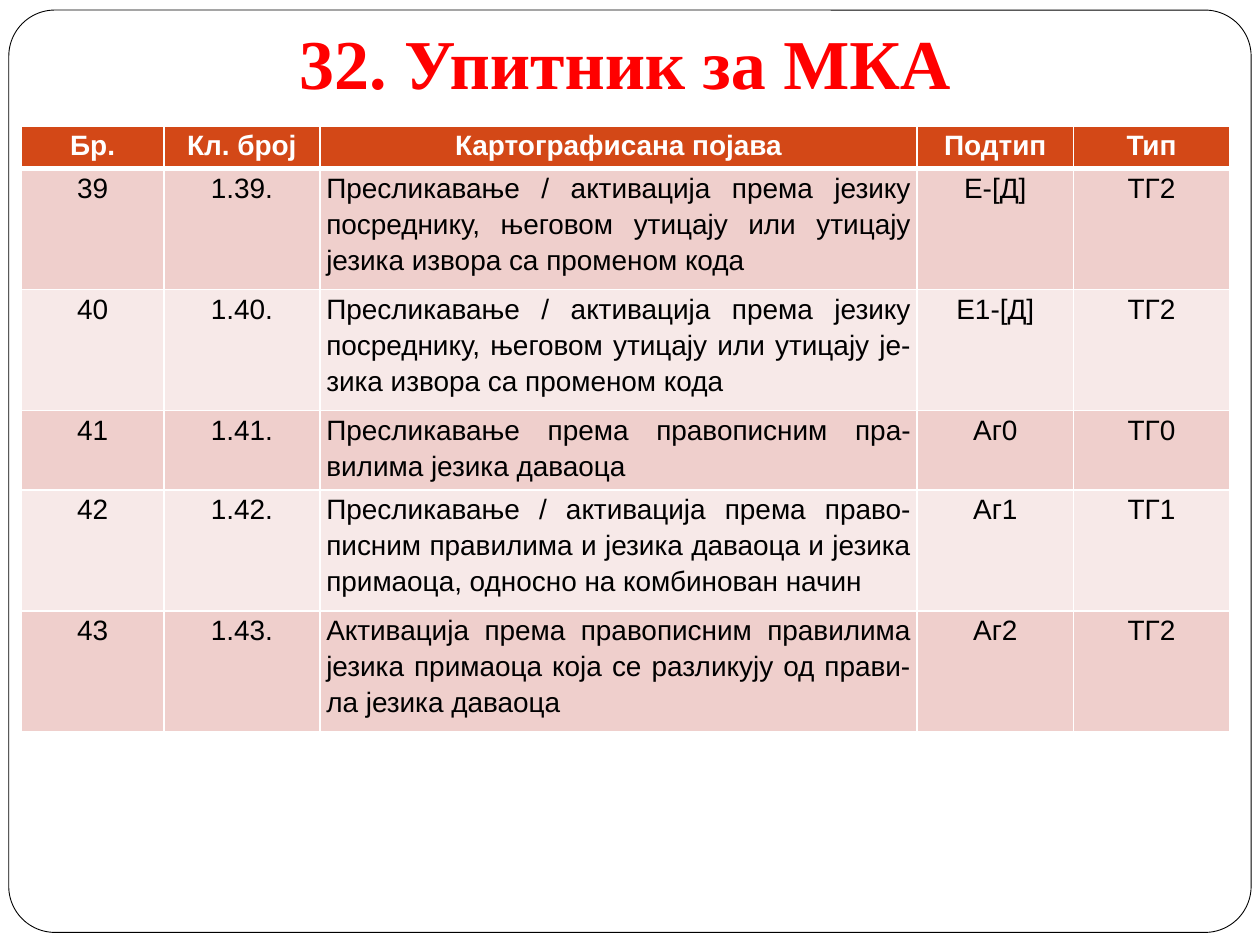
from lxml.etree import SubElement
from pptx import Presentation
from pptx.dml.color import RGBColor
from pptx.enum.shapes import MSO_SHAPE as Shape
from pptx.enum.text import MSO_ANCHOR as Anchor, PP_ALIGN as Align
from pptx.oxml.ns import qn
from pptx.util import Inches, Pt

WHITE = RGBColor(0xFF, 0xFF, 0xFF)
BLACK = RGBColor(0x00, 0x00, 0x00)
RED = RGBColor(0xFF, 0x00, 0x00)
HEADER_FILL = RGBColor(0xD3, 0x48, 0x17)
BAND_FILLS = [RGBColor(0xEF, 0xCF, 0xCC), RGBColor(0xF7, 0xE9, 0xE8)]

TITLE_FONT = {"name": "Times New Roman", "size": Pt(40), "bold": True}
HEADER_FONT = {"name": "Arial", "size": Pt(16), "bold": True}
BODY_FONT = {**HEADER_FONT, "bold": False}

COLUMN_WIDTHS = [1.13, 1.24, 4.74, 1.24, 1.24]
ROW_HEIGHTS = [0.34, 0.96, 0.96, 0.63, 0.96, 0.96]
PHENOMENON_COLUMN = 2
ROWS = [
    ("Бр.", "Кл. број", "Картографисана појава", "Подтип", "Тип"),
    ("39", "1.39.",
     "Пресликавање / активација према језику посреднику, његовом утицају "
     "или утицају језика извора са променом кода", "Е-[Д]", "ТГ2"),
    ("40", "1.40.",
     "Пресликавање / активација према језику посреднику, његовом утицају "
     "или утицају је-зика извора са променом кода", "Е1-[Д]", "ТГ2"),
    ("41", "1.41.",
     "Пресликавање према правописним пра-вилима језика даваоца",
     "Аг0", "ТГ0"),
    ("42", "1.42.",
     "Пресликавање / активација према право-писним правилима и језика "
     "даваоца и језика примаоца, односно на комбинован начин",
     "Аг1", "ТГ1"),
    ("43", "1.43.",
     "Активација према правописним правилима језика примаоца која се "
     "разликују од прави-ла језика даваоца", "Аг2", "ТГ2"),
]


def set_attributes(target, values):
    for name, value in values.items():
        setattr(target, name, value)


def write_text(paragraph, text, font, color, alignment):
    run = paragraph.add_run()
    run.text = text
    set_attributes(run.font, font)
    run.font.color.rgb = color
    paragraph.alignment = alignment


def add_frame(slide):
    frame = slide.shapes.add_shape(
        Shape.ROUNDED_RECTANGLE,
        Inches(0.07), Inches(0.08), Inches(9.86), Inches(7.32))
    frame.adjustments[0] = 0.05
    frame.shadow.inherit = False
    frame.fill.solid()
    frame.fill.fore_color.rgb = WHITE
    frame.line.color.rgb = BLACK
    frame.line.width = Pt(0.5)


def add_title(slide, text):
    title = slide.shapes.add_textbox(
        Inches(0.25), Inches(0), Inches(9.42), Inches(0.92))
    set_attributes(title.text_frame, {
        "word_wrap": True,
        "vertical_anchor": Anchor.BOTTOM,
        "margin_bottom": Inches(0.1),
    })
    write_text(title.text_frame.paragraphs[0], text, TITLE_FONT, RED,
               Align.CENTER)


def add_borders(cell, bottom_width):
    """Draw white cell borders; they must come before the fill in the XML."""
    properties = cell._tc.get_or_add_tcPr()
    widths = {"lnL": 1, "lnR": 1, "lnT": 1, "lnB": bottom_width}
    for position, (side, width) in enumerate(widths.items()):
        border = SubElement(properties, qn(f"a:{side}"), w=str(Pt(width)))
        fill = SubElement(border, qn("a:solidFill"))
        SubElement(fill, qn("a:srgbClr"), val=str(WHITE))
        properties.insert(position, border)


def format_cell(cell, text, row, column):
    is_header = row == 0
    set_attributes(cell, {
        "margin_left": Inches(0.05), "margin_right": Inches(0.05),
        "margin_top": 0, "margin_bottom": 0,
        "vertical_anchor": Anchor.TOP,
    })
    cell.fill.solid()
    cell.fill.fore_color.rgb = (
        HEADER_FILL if is_header else BAND_FILLS[(row - 1) % 2])
    add_borders(cell, 3 if is_header else 1)
    justified = column == PHENOMENON_COLUMN and not is_header
    paragraph = cell.text_frame.paragraphs[0]
    paragraph.line_spacing = 1.15
    write_text(paragraph, text,
               HEADER_FONT if is_header else BODY_FONT,
               WHITE if is_header else BLACK,
               Align.JUSTIFY if justified else Align.CENTER)


def add_questionnaire_table(slide):
    table = slide.shapes.add_table(
        len(ROWS), len(COLUMN_WIDTHS), Inches(0.17), Inches(1),
        Inches(sum(COLUMN_WIDTHS)), Inches(sum(ROW_HEIGHTS))).table
    for column, width in zip(table.columns, COLUMN_WIDTHS):
        column.width = Inches(width)
    for row, height in zip(table.rows, ROW_HEIGHTS):
        row.height = Inches(height)
    for row, texts in enumerate(ROWS):
        for column, text in enumerate(texts):
            format_cell(table.cell(row, column), text, row, column)


def main():
    presentation = Presentation()
    presentation.slide_width = Inches(10)
    presentation.slide_height = Inches(7.5)
    slide = presentation.slides.add_slide(presentation.slide_layouts[6])
    add_frame(slide)
    add_title(slide, "32. Упитник за МКА")
    add_questionnaire_table(slide)
    presentation.save("out.pptx")


if __name__ == "__main__":
    main()
